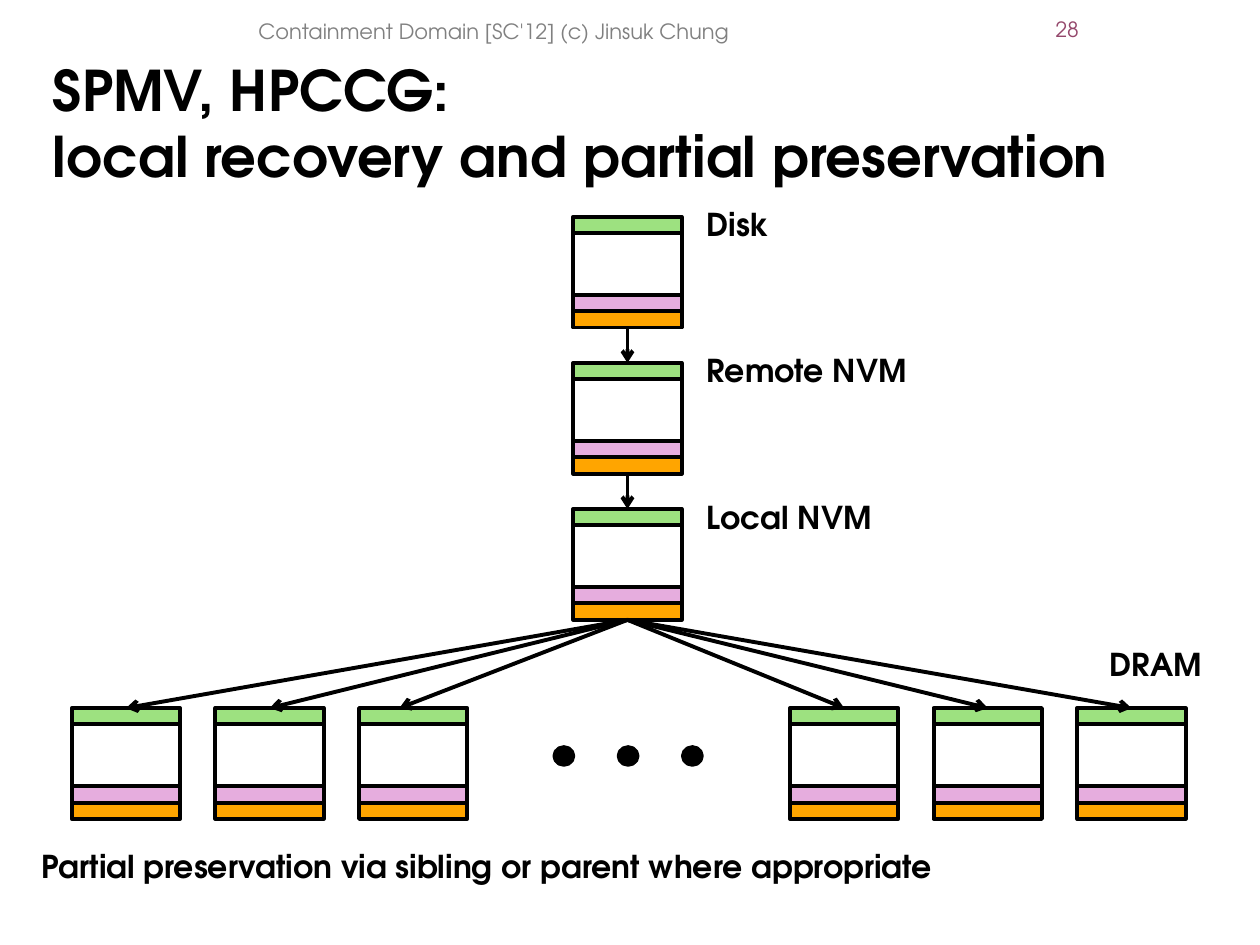
import copy

import lxml.etree
import pptx
import pptx.dml.color
import pptx.enum.shapes
import pptx.enum.text
import pptx.oxml.ns
import pptx.util

Inches = pptx.util.Inches
Pt = pptx.util.Pt
SHAPE = pptx.enum.shapes.MSO_SHAPE
ALIGN = pptx.enum.text.PP_ALIGN
ANCHOR = pptx.enum.text.MSO_ANCHOR
qn = pptx.oxml.ns.qn

FONT = "TeX Gyre Adventor"
COLORS = {
    "ink": "000000",
    "footer": "808080",
    "number": "94476B",
    "green": "9DE180",
    "pink": "E6ADDE",
    "orange": "FFA500",
}

# Memory block: a tall body between thin coloured bands
BLOCK_W, BAND_H, BODY_H = 0.86, 0.13, 0.49
BLOCK_H = 3 * BAND_H + BODY_H

# The hierarchy runs down the middle; the DRAM row is a grid with a gap for dots
LEVELS = ["Disk", "Remote NVM", "Local NVM"]
LEVEL_LEFT, LEVEL_TOP, LEVEL_PITCH = 4.55, 1.72, 1.16
CENTER = LEVEL_LEFT + BLOCK_W / 2
DRAM_LEFT, DRAM_TOP, DRAM_PITCH = 0.57, 5.62, 1.14
DRAM_COLUMNS = [0, 1, 2, 5, 6, 7]
TIP_SHIFT = {2: -0.11}
DOT_PITCH = 0.51


def rgb(name):
    return pptx.dml.color.RGBColor.from_string(COLORS[name])


def format_runs(p, size, color="ink", bold=False):
    for r in p.runs:
        r.font.name = FONT
        r.font.size = Pt(size)
        r.font.bold = bold
        r.font.color.rgb = rgb(color)


def set_title(s, text):
    sp = s.shapes.title
    sp.left, sp.top, sp.width, sp.height = map(Inches, (0.42, 0.5, 9.41, 0.98))
    tf = sp.text_frame
    tf.text = text
    tf.word_wrap = True
    tf.auto_size = pptx.enum.text.MSO_AUTO_SIZE.NONE
    tf.vertical_anchor = ANCHOR.MIDDLE
    tf.margin_left = tf.margin_top = tf.margin_right = tf.margin_bottom = 0
    p = tf.paragraphs[0]
    p.alignment = ALIGN.LEFT
    p.line_spacing = 0.99
    format_runs(p, 32, bold=True)
    # The line break needs the size of the runs to keep the line height
    for br in p._p.findall(qn("a:br")):
        br.append(copy.deepcopy(p.runs[0]._r.find(qn("a:rPr"))))


def add_text(s, text, left, top, width, height=0.4, size=18, color="ink",
             bold=True, align=ALIGN.LEFT, anchor=ANCHOR.TOP):
    sp = s.shapes.add_textbox(*map(Inches, (left, top, width, height)))
    tf = sp.text_frame
    tf.text = text
    tf.word_wrap = True
    tf.vertical_anchor = anchor
    p = tf.paragraphs[0]
    p.alignment = align
    format_runs(p, size, color, bold)


def add_outlined(shapes, kind, left, top, width, height, fill=None):
    sp = shapes.add_shape(kind, *map(Inches, (left, top, width, height)))
    sp.shadow.inherit = False
    if fill:
        sp.fill.solid()
        sp.fill.fore_color.rgb = rgb(fill)
    else:
        sp.fill.background()
    sp.line.color.rgb = rgb("ink")
    sp.line.width = Pt(2.25)


def add_block(s, left, top):
    group = s.shapes.add_group_shape()
    bands = [("green", BAND_H), (None, BODY_H), ("pink", BAND_H), ("orange", BAND_H)]
    for fill, height in bands:
        add_outlined(group.shapes, SHAPE.RECTANGLE, left, top, BLOCK_W, height, fill)
        top += height


def add_arrow(s, x1, y1, x2, y2):
    cxn = s.shapes.add_connector(
        pptx.enum.shapes.MSO_CONNECTOR.STRAIGHT, *map(Inches, (x1, y1, x2, y2)))
    cxn.line.color.rgb = rgb("ink")
    cxn.line.width = Pt(2.25)
    props = cxn._element.spPr
    lxml.etree.SubElement(props.find(qn("a:ln")), qn("a:tailEnd"), type="arrow")
    lxml.etree.SubElement(props, qn("a:effectLst"))


def add_hierarchy(s):
    for i, name in enumerate(LEVELS):
        top = LEVEL_TOP + i * LEVEL_PITCH
        add_block(s, LEVEL_LEFT, top)
        add_text(s, name, 5.51, top - 0.14, 1.99)
        if i:
            add_arrow(s, CENTER, top - LEVEL_PITCH + BLOCK_H, CENTER, top)


def add_dram_row(s):
    fan_top = LEVEL_TOP + (len(LEVELS) - 1) * LEVEL_PITCH + BLOCK_H
    for col in DRAM_COLUMNS:
        left = DRAM_LEFT + col * DRAM_PITCH
        add_block(s, left, DRAM_TOP)
        tip = left + BLOCK_W / 2 + TIP_SHIFT.get(col, 0)
        add_arrow(s, CENTER, fan_top, tip, DRAM_TOP)
    for i in range(3):
        add_outlined(s.shapes, SHAPE.OVAL, 4.4 + i * DOT_PITCH, 5.93, 0.15, 0.14, "ink")
    add_text(s, "DRAM", 8.71, 5.07, 1.41)


def main():
    prs = pptx.Presentation()
    prs.slide_width, prs.slide_height = Inches(10), Inches(7.5)
    s = prs.slides.add_slide(prs.slide_layouts[5])
    set_title(s, "SPMV, HPCCG: \vlocal recovery and partial preservation")
    add_text(s, "28", 7.75, -0.02, 0.91, 0.5, 12, "number", False,
             ALIGN.RIGHT, ANCHOR.MIDDLE)
    add_text(s, "Containment Domain [SC'12] (c) Jinsuk Chung", 0.92, 0, 6, 0.5, 12,
             "footer", False, ALIGN.CENTER, ANCHOR.MIDDLE)
    add_hierarchy(s)
    add_dram_row(s)
    add_text(s, "Partial preservation via sibling or parent where appropriate",
             0.23, 6.67, 8.97)
    prs.save("out.pptx")


if __name__ == "__main__":
    main()
